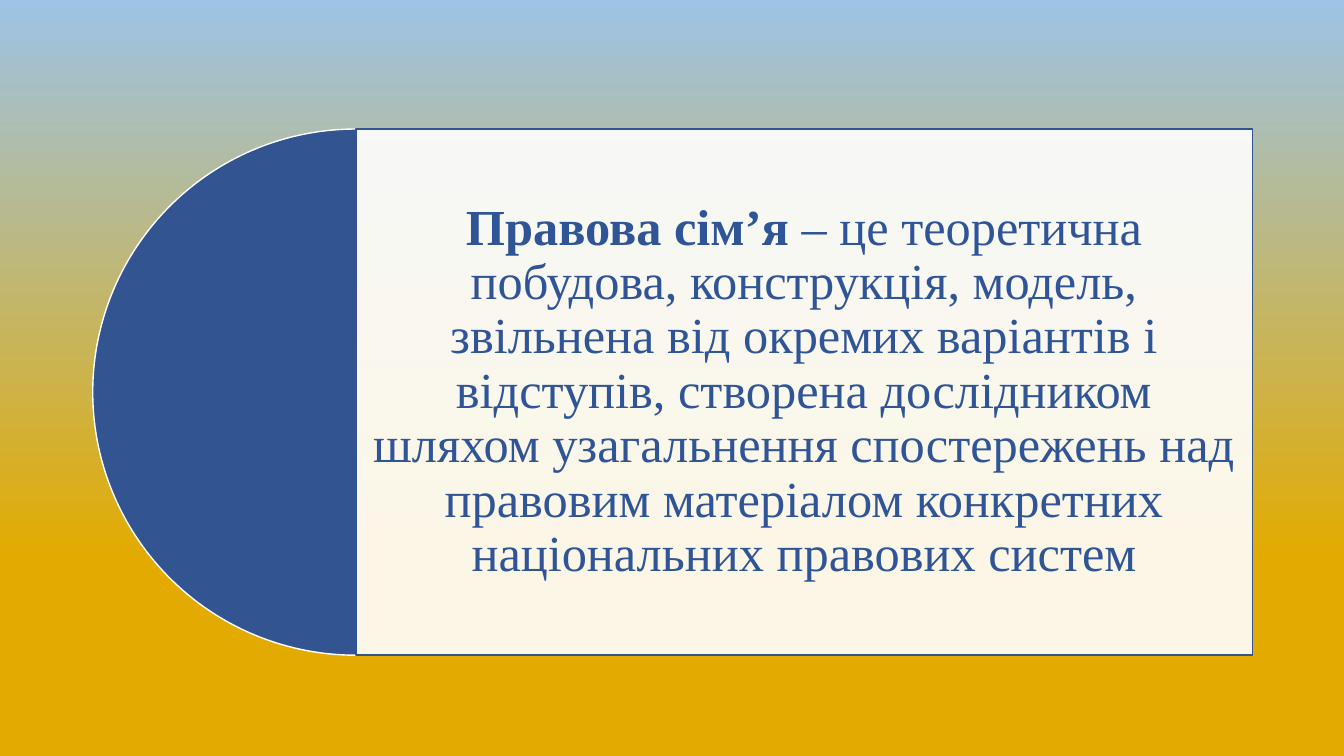
import pptx
import pptx.dml.color
import pptx.enum.shapes
import pptx.enum.text
import pptx.oxml.ns
import pptx.util
from lxml import etree
from pptx.util import Inches

BLUE = "325491"
PANEL_TOP, PANEL_HEIGHT = 1.28, 5.22
PIE_LEFT = 0.92
PANEL_LEFT, PANEL_WIDTH = PIE_LEFT + PANEL_HEIGHT / 2, 8.89

DEFINITION = [
    ("Правова сім’я ", True),
    ("– це теоретична побудова, конструкція, модель, звільнена від окремих "
     "варіантів і відступів, створена дослідником шляхом узагальнення "
     "спостережень над правовим матеріалом конкретних національних правових "
     "систем", False),
]


def color(hex_value):
    return pptx.dml.color.RGBColor.from_string(hex_value)


def apply_format(target, values):
    for name, value in values.items():
        setattr(target, name, value)


def set_background(slide, stops):
    fill = slide.background.fill
    fill.gradient()
    fill.gradient_angle = 90
    for stop, (position, hex_value) in zip(fill.gradient_stops, stops):
        stop.position = position
        stop.color.rgb = color(hex_value)


def add_filled_shape(slide, kind, left, width, fill, line, opacity=100):
    shape = slide.shapes.add_shape(
        kind, Inches(left), Inches(PANEL_TOP), Inches(width), Inches(PANEL_HEIGHT))
    shape.shadow.inherit = False
    shape.fill.solid()
    shape.fill.fore_color.rgb = color(fill)
    shape.line.color.rgb = color(line)
    shape.line.width = pptx.util.Pt(1)
    if opacity < 100:
        fill_color = shape.fill._xPr.find(".//" + pptx.oxml.ns.qn("a:srgbClr"))
        alpha = etree.SubElement(fill_color, pptx.oxml.ns.qn("a:alpha"))
        alpha.set("val", str(opacity * 1000))
    return shape


def write_definition(shape, runs):
    frame = shape.text_frame
    margins = dict.fromkeys(
        ("margin_left", "margin_top", "margin_right", "margin_bottom"), Inches(0.15))
    apply_format(frame, {
        "word_wrap": True,
        "vertical_anchor": pptx.enum.text.MSO_ANCHOR.MIDDLE,
        **margins,
    })
    paragraph = frame.paragraphs[0]
    apply_format(paragraph, {
        "alignment": pptx.enum.text.PP_ALIGN.CENTER, "line_spacing": 0.9})
    for text, bold in runs:
        run = paragraph.add_run()
        run.text = text
        apply_format(run.font, {
            "name": "Times New Roman", "size": pptx.util.Pt(36), "bold": bold})
        run.font.color.rgb = color("2F5597")


def main():
    presentation = pptx.Presentation()
    presentation.slide_width = Inches(13.33)
    presentation.slide_height = Inches(7.5)
    slide = presentation.slides.add_slide(presentation.slide_layouts[6])
    set_background(slide, [(0.26, "E3AB00"), (1, "9DC3E6")])

    # Half disc: a pie from 90 to 270 degrees
    shapes = pptx.enum.shapes.MSO_SHAPE
    half_disc = add_filled_shape(
        slide, shapes.PIE, PIE_LEFT, PANEL_HEIGHT, BLUE, "FFFFFF")
    half_disc.adjustments[0] = 54
    half_disc.adjustments[1] = 162

    # Definition panel
    panel = add_filled_shape(
        slide, shapes.RECTANGLE, PANEL_LEFT, PANEL_WIDTH, "FFFFFF", BLUE, opacity=90)
    write_definition(panel, DEFINITION)

    presentation.save("out.pptx")


if __name__ == "__main__":
    main()
